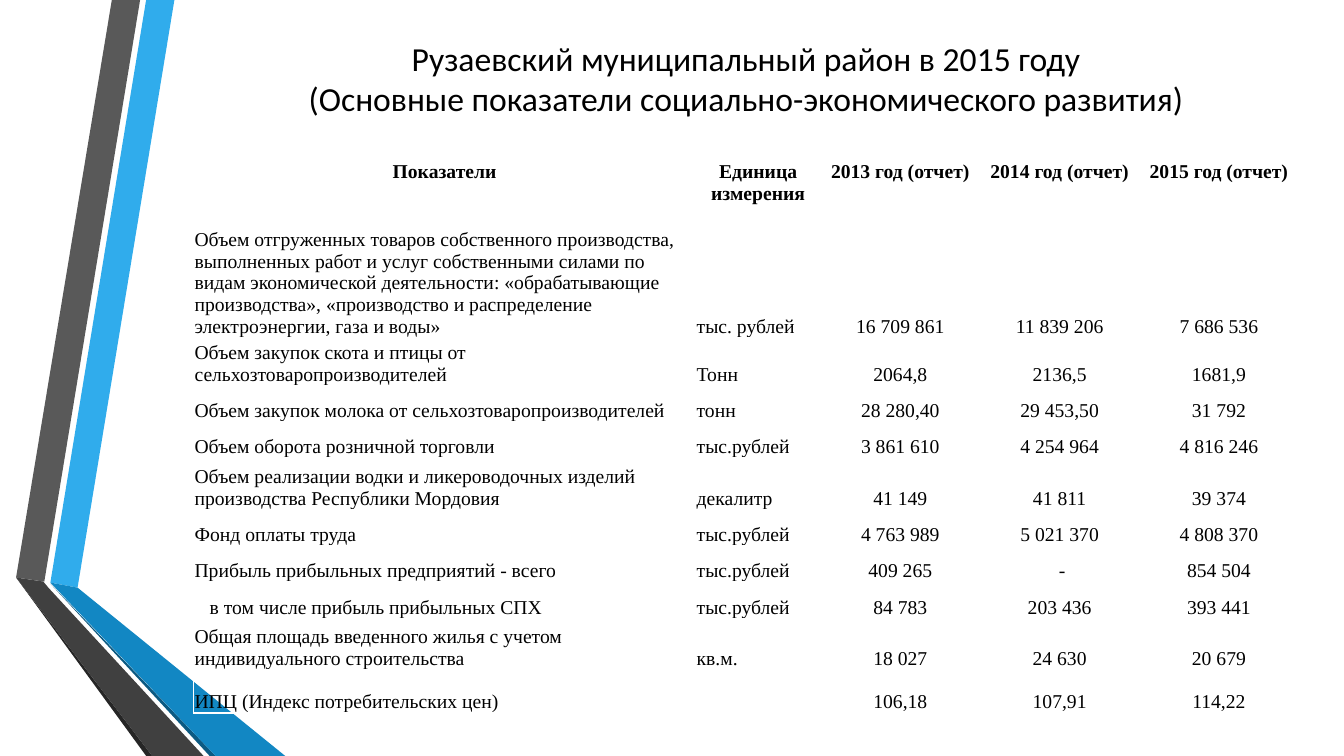
from dataclasses import dataclass

from lxml import etree
from pptx import Presentation
from pptx.dml.color import RGBColor
from pptx.enum.text import MSO_ANCHOR, PP_ALIGN
from pptx.oxml.ns import qn
from pptx.util import Inches, Pt

LEFT, CENTER = PP_ALIGN.LEFT, PP_ALIGN.CENTER
TOP, MIDDLE, BOTTOM = MSO_ANCHOR.TOP, MSO_ANCHOR.MIDDLE, MSO_ANCHOR.BOTTOM


@dataclass(frozen=True)
class Theme:
    text: str = "000000"
    border: str = "FFFFFF"
    blue: str = "30ACEC"
    blue_fold: str = "1287C3"
    blue_edge: str = "0C5A82"
    gray: str = "595959"
    gray_fold: str = "404040"
    gray_edge: str = "262626"
    title_font: str = "Calibri"
    table_font: str = "Times New Roman"
    title_size: int = 24
    table_size: int = 14
    border_width: int = 1


@dataclass(frozen=True)
class Ribbon:
    color: str
    points: tuple[tuple[float, float], ...]


@dataclass(frozen=True)
class Indicator:
    name: str
    unit: str
    values: tuple[str, str, str]
    height: float = 0.36
    indent: float = 0


THEME = Theme()

RIBBONS = (
    Ribbon(THEME.blue, ((0.5, 5.78), (0.77, 5.83), (1.73, 0), (1.45, 0))),
    Ribbon(THEME.gray, ((1.39, 0), (1.11, 0), (0.16, 5.73), (0.44, 5.77))),
    Ribbon(THEME.gray_edge, ((0.16, 5.73), (1.45, 7.5), (1.51, 7.5))),
    Ribbon(THEME.blue_edge, ((0.5, 5.79), (2.08, 7.5), (2.14, 7.5))),
    Ribbon(THEME.blue_fold, ((0.5, 5.78), (2.14, 7.5), (2.83, 7.5), (0.77, 5.83))),
    Ribbon(THEME.gray_fold, ((2.02, 7.5), (0.48, 5.83), (0.43, 5.77), (0.16, 5.73), (1.51, 7.5))),
)

TITLE = "Рузаевский муниципальный район в 2015 году\n(Основные показатели социально-экономического развития)"
HEADINGS = ("Показатели", "Единица измерения", "2013 год (отчет)", "2014 год (отчет)", "2015 год (отчет)")
HEADING_HEIGHT = 0.41
COLUMN_WIDTHS = (4.98, 1.24, 1.58, 1.58, 1.58)
INDICATORS = (
    Indicator(
        "Объем отгруженных товаров собственного производства, выполненных работ и услуг "
        "собственными силами по видам экономической деятельности: «обрабатывающие "
        "производства», «производство и распределение электроэнергии, газа и воды»",
        "тыс. рублей", ("16 709 861", "11 839 206", "7 686 536"), height=1.28),
    Indicator("Объем закупок скота и птицы от сельхозтоваропроизводителей",
              "Тонн", ("2064,8", "2136,5", "1681,9"), height=0.41),
    Indicator("Объем закупок молока от сельхозтоваропроизводителей",
              "тонн", ("28 280,40", "29 453,50", "31 792")),
    Indicator("Объем оборота розничной торговли",
              "тыс.рублей", ("3 861 610", "4 254 964", "4 816 246")),
    Indicator("Объем реализации водки и ликероводочных изделий производства Республики Мордовия",
              "декалитр", ("41 149", "41 811", "39 374"), height=0.51),
    Indicator("Фонд оплаты труда", "тыс.рублей", ("4 763 989", "5 021 370", "4 808 370")),
    Indicator("Прибыль прибыльных предприятий - всего",
              "тыс.рублей", ("409 265", " -", "854 504")),
    Indicator("в том числе прибыль прибыльных СПХ",
              "тыс.рублей", ("84 783", "203 436", "393 441"), indent=0.15),
    Indicator("Общая площадь введенного жилья с учетом индивидуального строительства",
              "кв.м.", ("18 027", "24 630", "20 679"), height=0.51),
    Indicator("ИПЦ (Индекс потребительских цен)", "", ("106,18", "107,91", "114,22"), height=0.43),
)


def write_text(frame, text: str, *, font: str, size: int, align=LEFT,
               bold: bool = False, indent: float = 0) -> None:
    """Fill the first paragraph; a newline becomes a line break."""
    para = frame.paragraphs[0]
    para.alignment = align
    if indent:
        para._p.get_or_add_pPr().set("marL", str(Inches(indent)))
    for number, line in enumerate(text.split("\n")):
        if number:
            para.add_line_break()
        span = para.add_run()
        span.text = line
        span.font.name = font
        span.font.size = Pt(size)
        span.font.bold = bold
        span.font.color.rgb = RGBColor.from_string(THEME.text)


def draw_ribbon(page, ribbon: Ribbon) -> None:
    start, *rest = [(Inches(x), Inches(y)) for x, y in ribbon.points]
    builder = page.shapes.build_freeform(*start)
    builder.add_line_segments(rest, close=True)
    shape = builder.convert_to_shape()
    shape.shadow.inherit = False
    shape.fill.solid()
    shape.fill.fore_color.rgb = RGBColor.from_string(ribbon.color)
    shape.line.fill.background()


def draw_title(page) -> None:
    box = page.shapes.add_textbox(Inches(1.92), Inches(0.27), Inches(10.96), Inches(1.01))
    box.text_frame.word_wrap = True
    box.text_frame.vertical_anchor = MIDDLE
    write_text(box.text_frame, TITLE, font=THEME.title_font, size=THEME.title_size, align=CENTER)


def format_cell(cell, anchor) -> None:
    """Set the margins, white borders and an empty fill."""
    cell.margin_left = cell.margin_right = cell.margin_top = Inches(0.01)
    cell.margin_bottom = 0
    cell.vertical_anchor = anchor
    properties = cell._tc.get_or_add_tcPr()
    for side in ("a:lnL", "a:lnR", "a:lnT", "a:lnB"):
        line = etree.SubElement(properties, qn(side), w=str(Pt(THEME.border_width)))
        fill = etree.SubElement(line, qn("a:solidFill"))
        etree.SubElement(fill, qn("a:srgbClr"), val=THEME.border)
    cell.fill.background()


def draw_table(page) -> None:
    heights = (HEADING_HEIGHT, *(item.height for item in INDICATORS))
    table = page.shapes.add_table(
        len(heights), len(COLUMN_WIDTHS), Inches(1.92), Inches(1.59),
        Inches(sum(COLUMN_WIDTHS)), Inches(sum(heights))).table
    table.first_row = table.horz_banding = False
    for column, width in zip(table.columns, COLUMN_WIDTHS):
        column.width = Inches(width)
    for row, height in zip(table.rows, heights):
        row.height = Inches(height)

    # Heading row
    style = {"font": THEME.table_font, "size": THEME.table_size}
    for index, heading in enumerate(HEADINGS):
        cell = table.cell(0, index)
        format_cell(cell, TOP)
        write_text(cell.text_frame, heading, align=CENTER, bold=True, **style)

    # Indicator rows: name and unit to the left, yearly values centred
    for row_number, item in enumerate(INDICATORS, start=1):
        for index, text in enumerate((item.name, item.unit, *item.values)):
            cell = table.cell(row_number, index)
            format_cell(cell, BOTTOM)
            if text:
                write_text(cell.text_frame, text, align=LEFT if index < 2 else CENTER,
                           indent=0 if index else item.indent, **style)


def main() -> None:
    deck = Presentation()
    deck.slide_width, deck.slide_height = Inches(13.33), Inches(7.5)
    page = deck.slides.add_slide(deck.slide_layouts[6])
    for ribbon in RIBBONS:
        draw_ribbon(page, ribbon)
    draw_title(page)
    draw_table(page)
    deck.save("out.pptx")


if __name__ == "__main__":
    main()
